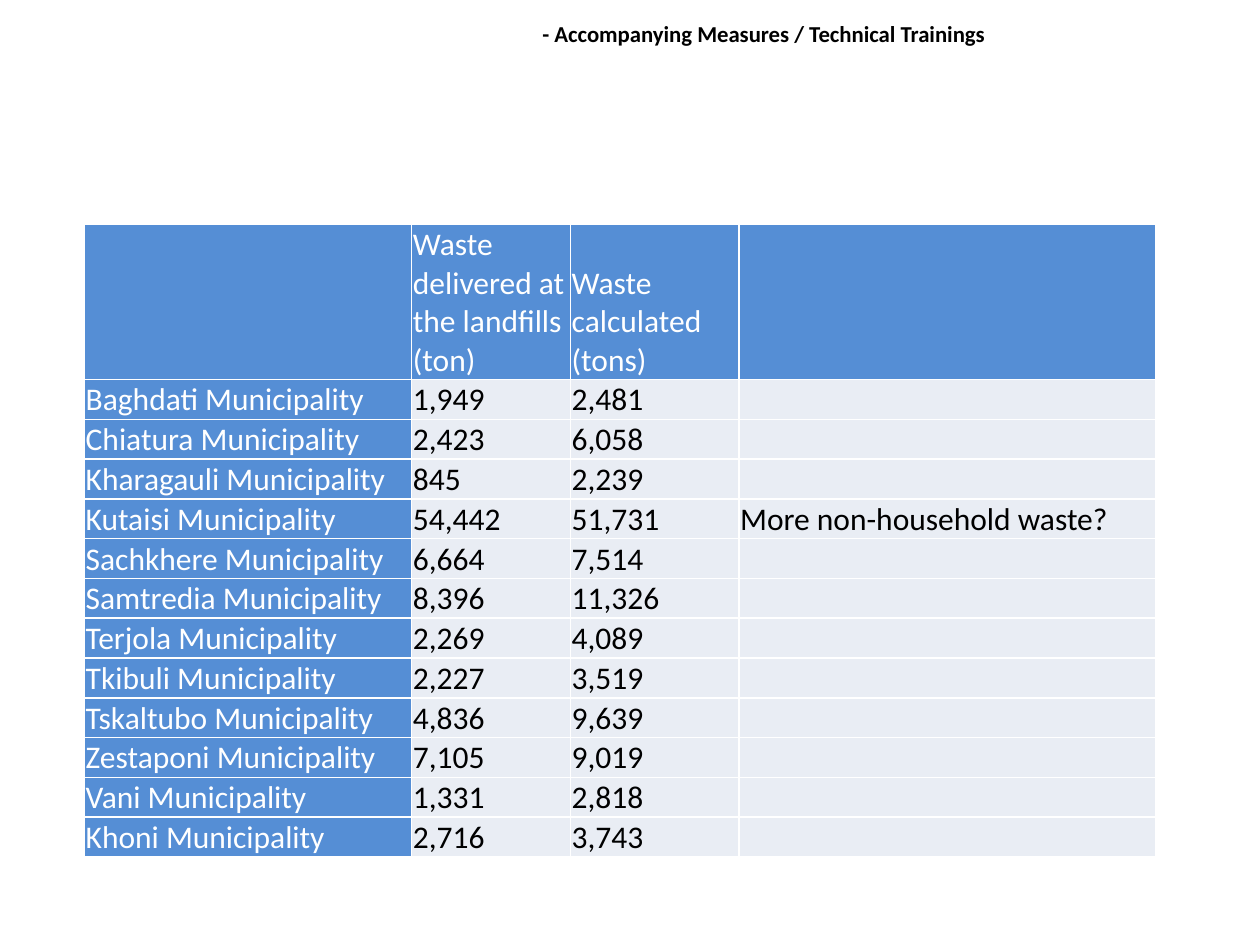
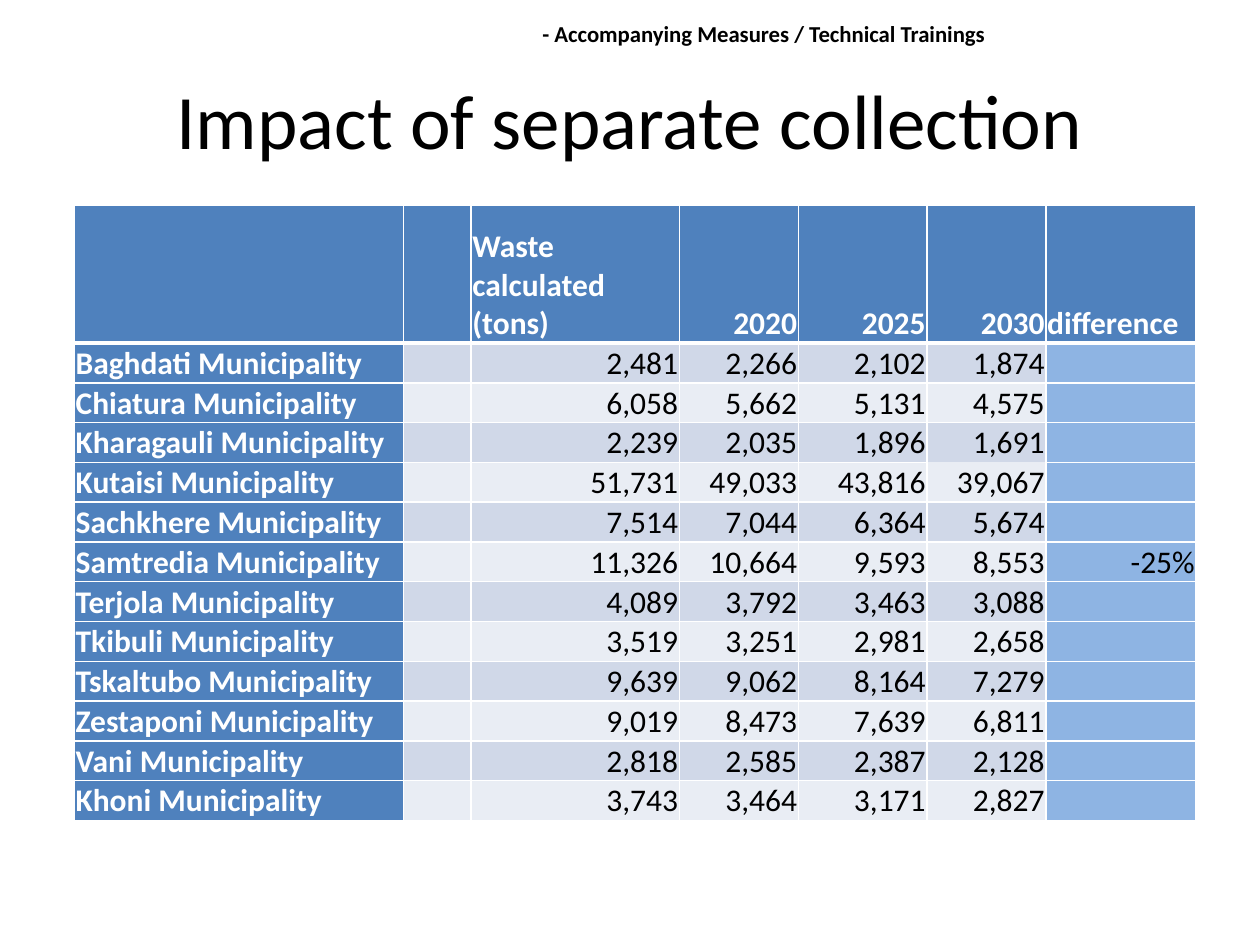
from dataclasses import dataclass

from lxml import etree
from pptx import Presentation
from pptx.dml.color import RGBColor
from pptx.enum.shapes import MSO_SHAPE
from pptx.enum.text import MSO_ANCHOR, PP_ALIGN
from pptx.oxml.ns import qn
from pptx.util import Pt

LEFT, CENTER, RIGHT = PP_ALIGN.LEFT, PP_ALIGN.CENTER, PP_ALIGN.RIGHT
TOP, MIDDLE, BOTTOM = MSO_ANCHOR.TOP, MSO_ANCHOR.MIDDLE, MSO_ANCHOR.BOTTOM
RECTANGLE = MSO_SHAPE.RECTANGLE

RUNNING_HEAD = " - Accompanying Measures / Technical Trainings"
IMPACT_TITLE = "Impact of separate collection"

# municipality, delivered, calculated, 2020, 2025, 2030
WASTE = [
    ("Baghdati", "1,949", "2,481", "2,266", "2,102", "1,874"),
    ("Chiatura", "2,423", "6,058", "5,662", "5,131", "4,575"),
    ("Kharagauli", "845", "2,239", "2,035", "1,896", "1,691"),
    ("Kutaisi", "54,442", "51,731", "49,033", "43,816", "39,067"),
    ("Sachkhere", "6,664", "7,514", "7,044", "6,364", "5,674"),
    ("Samtredia", "8,396", "11,326", "10,664", "9,593", "8,553"),
    ("Terjola", "2,269", "4,089", "3,792", "3,463", "3,088"),
    ("Tkibuli", "2,227", "3,519", "3,251", "2,981", "2,658"),
    ("Tskaltubo", "4,836", "9,639", "9,062", "8,164", "7,279"),
    ("Zestaponi", "7,105", "9,019", "8,473", "7,639", "6,811"),
    ("Vani", "1,331", "2,818", "2,585", "2,387", "2,128"),
    ("Khoni", "2,716", "3,743", "3,464", "3,171", "2,827"),
]
REMARKS = {"Kutaisi": "More non-household waste?"}
DIFFERENCES = {"Samtredia": "-25%"}
DELIVERY_HEADINGS = ["", "Waste delivered at the landfills (ton)",
                     "Waste calculated (tons)", ""]
IMPACT_HEADINGS = ["", "", "Waste calculated (tons)", "2020", "2025", "2030", "difference"]


@dataclass(frozen=True)
class Theme:
    font: str = "Calibri"
    white: str = "FFFFFF"
    black: str = "000000"
    bright_blue: str = "558ED5"
    deep_blue: str = "4F81BD"
    sky_blue: str = "8EB4E3"
    dark_band: str = "D0D8E8"
    light_band: str = "E9EDF4"
    head_size: int = 13
    title_size: int = 44
    table_size: int = 18
    thin_line: int = 1
    thick_line: int = 3


THEME = Theme()
ROW_HEIGHT = 22.75
CELL_FORMAT = {"margin_left": Pt(0.75), "margin_right": Pt(0.75), "margin_top": Pt(0.75),
               "margin_bottom": 0, "vertical_anchor": BOTTOM}
HEAD_FORMAT = {"margin_left": Pt(3), "margin_right": Pt(3), "margin_top": Pt(3),
               "margin_bottom": Pt(3), "vertical_anchor": MIDDLE, "word_wrap": True}
TITLE_FORMAT = {"vertical_anchor": TOP, "word_wrap": True}


def apply_format(target, values):
    for name, value in values.items():
        setattr(target, name, value)


def paint(target, color):
    target.fill.solid()
    target.fill.fore_color.rgb = RGBColor.from_string(color)


def write(frame, text, size, color, bold=False, align=LEFT):
    para = frame.paragraphs[0]
    para.alignment = align
    span = para.add_run()
    span.text = text
    apply_format(span.font, {"name": THEME.font, "size": Pt(size), "bold": bold})
    span.font.color.rgb = RGBColor.from_string(color)


def set_borders(cell, top, bottom):
    """Draw white cell edges; a width of 0 hides that edge."""
    widths = {"a:lnL": THEME.thin_line, "a:lnR": THEME.thin_line,
              "a:lnT": top, "a:lnB": bottom}
    properties = cell._tc.get_or_add_tcPr()
    for tag, width in widths.items():
        line = etree.SubElement(properties, qn(tag), w=str(Pt(width)))
        if width:
            fill = etree.SubElement(line, qn("a:solidFill"))
            etree.SubElement(fill, qn("a:srgbClr"), val=THEME.white)
        else:
            etree.SubElement(line, qn("a:noFill"))


def add_waste_table(page, left, top, widths, header_height, rows, style, open_edge=None):
    """Add a table; open_edge is the (row, column) of a cell without a bottom edge."""
    heights = [header_height] + [ROW_HEIGHT] * (len(rows) - 1)
    table = page.shapes.add_table(len(rows), len(widths), Pt(left), Pt(top),
                                  Pt(sum(widths)), Pt(sum(heights))).table
    apply_format(table, {"first_row": False, "horz_banding": False})
    for column, width in zip(table.columns, widths):
        column.width = Pt(width)
    for row, height in zip(table.rows, heights):
        row.height = Pt(height)

    def edge_below(row, column):
        if (row, column) == open_edge:
            return 0
        return style["header_line"] if row == 0 else THEME.thin_line

    for r, texts in enumerate(rows):
        for c, text in enumerate(texts):
            cell = table.cell(r, c)
            is_label = r == 0 or c == 0
            above = edge_below(r - 1, c) if r else THEME.thin_line
            set_borders(cell, above, edge_below(r, c))
            apply_format(cell, CELL_FORMAT)
            if is_label:
                paint(cell, style["label_fill"])
            elif c in style["column_fills"]:
                paint(cell, style["column_fills"][c])
            else:
                paint(cell, style["bands"][(r - 1) % len(style["bands"])])
            if text:
                is_number = text.lstrip("-")[0].isdigit()
                write(cell.text_frame, text, THEME.table_size,
                      THEME.white if is_label else THEME.black,
                      bold=is_label and style["bold_labels"],
                      align=RIGHT if is_number and style["numbers_right"] else LEFT)


def add_page(deck):
    """Add a blank page with the running head."""
    page = deck.slides.add_slide(deck.slide_layouts[6])
    box = page.shapes.add_shape(RECTANGLE, Pt(304), Pt(8), Pt(286.5), Pt(22.5))
    box.shadow.inherit = False
    box.line.fill.background()
    paint(box, THEME.white)
    apply_format(box.text_frame, HEAD_FORMAT)
    write(box.text_frame, RUNNING_HEAD, THEME.head_size, THEME.black, bold=True)
    return page


def build_delivery_page(deck):
    rows = [DELIVERY_HEADINGS] + [
        [f"{name} Municipality", delivered, calculated, REMARKS.get(name, "")]
        for name, delivered, calculated, *_ in WASTE]
    style = {"label_fill": THEME.bright_blue, "bands": [THEME.light_band],
             "column_fills": {}, "header_line": THEME.thin_line,
             "bold_labels": False, "numbers_right": False}
    add_waste_table(add_page(deck), 48.25, 128.25, [187, 90.75, 96.25, 238],
                    88.5, rows, style)


def build_impact_page(deck):
    page = add_page(deck)
    title = page.shapes.add_textbox(Pt(36), Pt(38), Pt(648), Pt(51))
    apply_format(title.text_frame, TITLE_FORMAT)
    write(title.text_frame, IMPACT_TITLE, THEME.title_size, THEME.black, align=CENTER)

    rows = [IMPACT_HEADINGS] + [
        [f"{name} Municipality", "", *amounts, DIFFERENCES.get(name, "")]
        for name, _, *amounts in WASTE]
    style = {"label_fill": THEME.deep_blue, "bands": [THEME.dark_band, THEME.light_band],
             "column_fills": {6: THEME.sky_blue}, "header_line": THEME.thick_line,
             "bold_labels": True, "numbers_right": True}
    add_waste_table(page, 42.5, 117, [188, 38.75, 119, 68, 73.5, 68, 85.75],
                    79, rows, style, open_edge=(3, 5))


def main():
    deck = Presentation()
    apply_format(deck, {"slide_width": Pt(720), "slide_height": Pt(540)})
    build_delivery_page(deck)
    build_impact_page(deck)
    deck.save("out.pptx")


if __name__ == "__main__":
    main()
